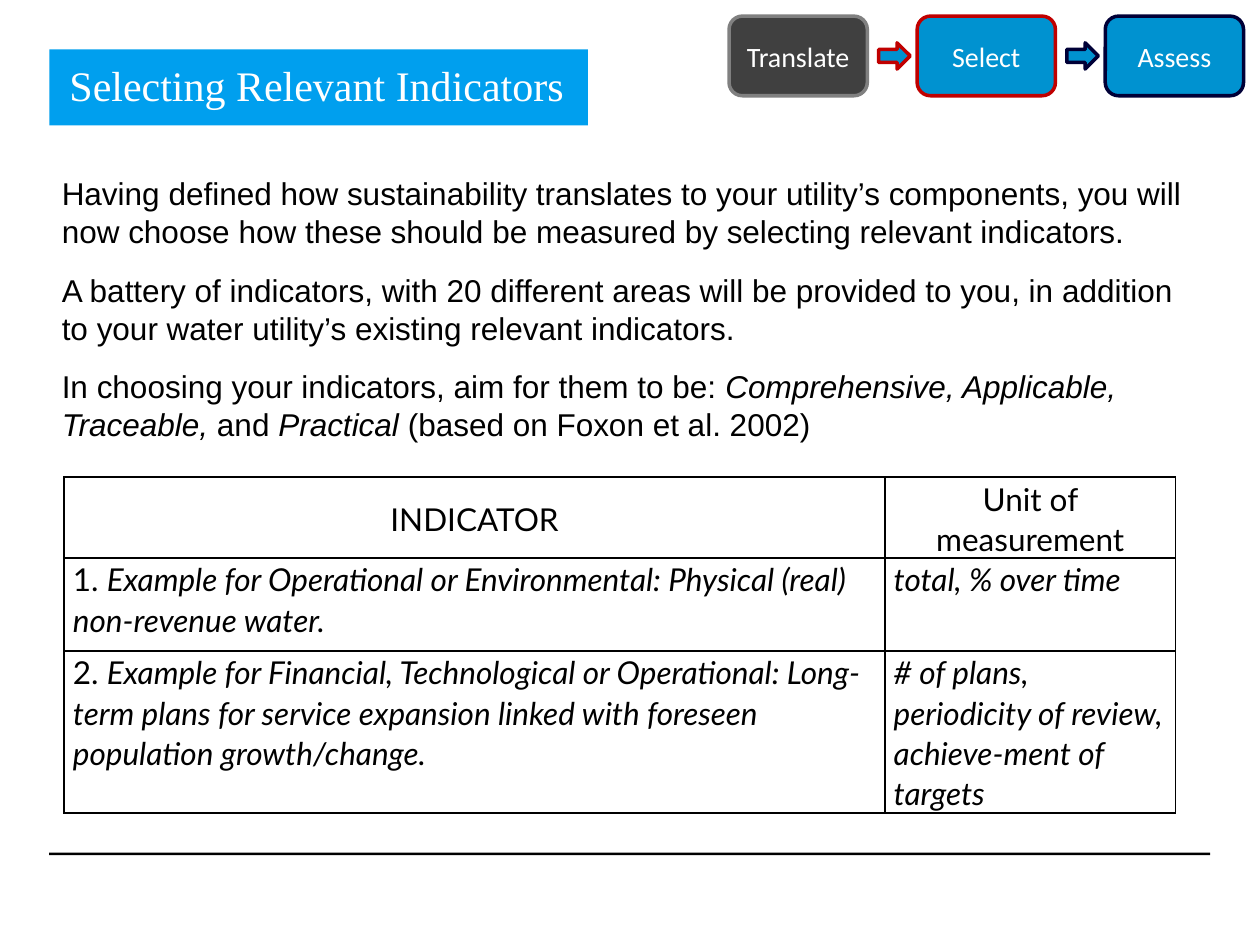
from lxml import etree
from pptx import Presentation
from pptx.dml.color import RGBColor
from pptx.enum.shapes import MSO_SHAPE
from pptx.enum.text import MSO_ANCHOR, MSO_AUTO_SIZE, PP_ALIGN
from pptx.oxml.ns import qn
from pptx.util import Pt

RECT = MSO_SHAPE.RECTANGLE
ROUND = MSO_SHAPE.ROUNDED_RECTANGLE
ARROW = MSO_SHAPE.RIGHT_ARROW
TOP, MIDDLE = MSO_ANCHOR.TOP, MSO_ANCHOR.MIDDLE
LEFT, CENTER = PP_ALIGN.LEFT, PP_ALIGN.CENTER
NO_FIT = MSO_AUTO_SIZE.NONE

BLACK, WHITE, BLUE = "000000", "FFFFFF", "0092D0"

STEPS = [
    ("Translate", "404040", "808080"),
    ("Select", BLUE, "C00000"),
    ("Assess", BLUE, "000037"),
]

# Each paragraph is a list of (text, italic) pairs.
INTRO = [
    [("Having defined how sustainability translates to your utility’s components, "
      "you will now choose how these should be measured by selecting relevant "
      "indicators.", False)],
    [("A battery of indicators, with 20 different areas will be provided to you, "
      "in addition to your water utility’s existing relevant indicators.", False)],
    [("In choosing your indicators, aim for them to be: ", False),
     ("Comprehensive, Applicable, Traceable, ", True), ("and ", False),
     ("Practical", True), (" (based on Foxon et al. 2002)", False)],
]

ROWS = [
    [[("INDICATOR", False)], [("Unit of measurement", False)]],
    [[("1. ", False),
      ("Example for Operational or Environmental: Physical (real) "
       "non-revenue water.", True)],
     [("total, % over time", True)]],
    [[("2. ", False),
      ("Example for Financial, Technological or Operational: Long-term plans for "
       "service expansion linked with foreseen population growth/change.", True)],
     [("# of plans, periodicity of review, achieve-ment of targets", True)]],
]


def paint(fmt, color):
    fmt.solid()
    fmt.fore_color.rgb = RGBColor.from_string(color)


def style(font, name, size, color):
    font.name, font.size = name, Pt(size)
    font.color.rgb = RGBColor.from_string(color)


def write(para, parts, name, size):
    """Add (text, italic) parts to a paragraph as black runs."""
    for text, italic in parts:
        run = para.add_run()
        run.text = text
        style(run.font, name, size, BLACK)
        run.font.italic = italic


def add_block(slide, kind, x, y, w, h, fill, line=None):
    block = slide.shapes.add_shape(kind, Pt(x), Pt(y), Pt(w), Pt(h))
    block.shadow.inherit = False
    paint(block.fill, fill)
    if line:
        paint(block.line.fill, line)
        block.line.width = Pt(2)
    else:
        block.line.fill.background()
    return block


def add_title(slide, x, y, w, h):
    title = slide.shapes.title
    title.left, title.top, title.width, title.height = Pt(x), Pt(y), Pt(w), Pt(h)
    paint(title.fill, "009FEE")
    frame = title.text_frame
    frame.text = "Selecting Relevant Indicators"
    frame.auto_size, frame.word_wrap = NO_FIT, False
    frame.vertical_anchor = TOP
    frame.margin_left = frame.margin_right = Pt(11.5)
    frame.margin_top, frame.margin_bottom = Pt(6), Pt(8.5)
    para = frame.paragraphs[0]
    para.alignment = LEFT
    style(para.runs[0].font, "Times New Roman", 24, WHITE)


def add_steps(slide, x, y, w, h):
    """Spread the step boxes over the width, with an arrow in each gap."""
    wide, long, thick = 79, 18, 15
    pitch = (w - wide) / (len(STEPS) - 1)
    for i, (name, fill, line) in enumerate(STEPS):
        left = x + i * pitch
        box = add_block(slide, ROUND, left, y, wide, h, fill, line)
        frame = box.text_frame
        frame.text = name
        frame.vertical_anchor = MIDDLE
        para = frame.paragraphs[0]
        para.alignment = CENTER
        style(para.runs[0].font, "Calibri", 16, WHITE)
        if i:
            add_block(slide, ARROW, left - long - 4, y + (h - thick) / 2,
                      long, thick, fill, line)


def add_intro(slide, x, y, w, h):
    frame = slide.shapes.add_textbox(Pt(x), Pt(y), Pt(w), Pt(h)).text_frame
    frame.word_wrap = True
    for i, parts in enumerate(INTRO):
        para = frame.add_paragraph() if i else frame.paragraphs[0]
        para.space_before, para.space_after = Pt(6 if i else 0), Pt(6)
        write(para, parts, "Arial", 18)


def add_border(cell):
    """Draw a thin black line on all four sides of a cell."""
    props = cell._tc.get_or_add_tcPr()
    for i, side in enumerate(("a:lnL", "a:lnR", "a:lnT", "a:lnB")):
        line = etree.Element(qn(side), w=str(Pt(1)))
        fill = etree.SubElement(line, qn("a:solidFill"))
        etree.SubElement(fill, qn("a:srgbClr"), val=BLACK)
        props.insert(i, line)


def add_grid(slide, x, y, widths, heights):
    table = slide.shapes.add_table(
        len(heights), len(widths), Pt(x), Pt(y),
        Pt(sum(widths)), Pt(sum(heights))).table
    for col, width in zip(table.columns, widths):
        col.width = Pt(width)
    for i, (row, height) in enumerate(zip(table.rows, heights)):
        row.height = Pt(height)
        for cell, parts in zip(row.cells, ROWS[i]):
            paint(cell.fill, WHITE)
            add_border(cell)
            cell.margin_left = cell.margin_right = Pt(5)
            cell.margin_top = cell.margin_bottom = 0
            cell.vertical_anchor = TOP if i else MIDDLE
            para = cell.text_frame.paragraphs[0]
            para.alignment = LEFT if i else CENTER
            para.line_spacing = 1.07
            write(para, parts, "Lato", 18)


def main():
    deck = Presentation()
    deck.slide_width, deck.slide_height = Pt(720), Pt(540)
    slide = deck.slides.add_slide(deck.slide_layouts[5])
    add_block(slide, RECT, 28, 487.2, 663.5, 1.5, BLACK)
    add_intro(slide, 28.2, 96, 666, 180)
    add_title(slide, 28.2, 28.2, 307.8, 43.5)
    add_grid(slide, 36.7, 272.7, (469, 166), (46.3, 53, 92.5))
    add_steps(slide, 416.6, 9.2, 294, 45.5)
    deck.save("out.pptx")


if __name__ == "__main__":
    main()
